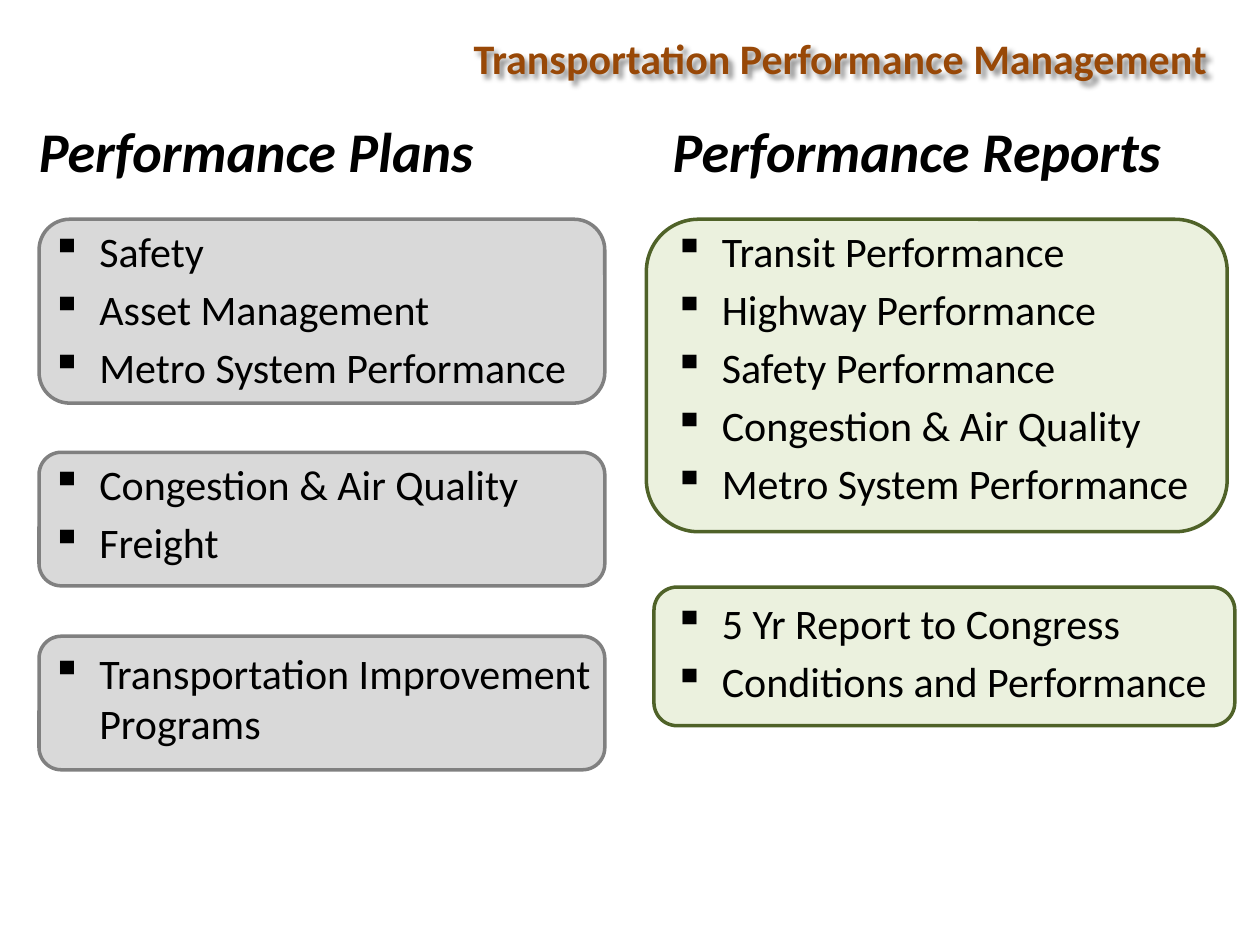
from lxml import etree
from pptx import Presentation
from pptx import util as u
from pptx.dml.color import RGBColor
from pptx.enum import shapes, text
from pptx.oxml import ns

BLACK = RGBColor(0x00, 0x00, 0x00)
BROWN = RGBColor(0x98, 0x48, 0x07)
GREY = RGBColor(0xD9, 0xD9, 0xD9)
GREY_EDGE = RGBColor(0x80, 0x80, 0x80)
GREEN = RGBColor(0xEB, 0xF1, 0xDE)
GREEN_EDGE = RGBColor(0x4F, 0x62, 0x28)

COLUMNS, ROWS = 100, 75
LIST_WIDTH = 44.9
PLANS_LEFT, REPORTS_LEFT = 3.1, 52.5


def write(paragraph, content, size=24, color=BLACK, bold=False, italic=False):
    paragraph.text = content
    font = paragraph.font
    font.name = "Calibri"
    font.size = u.Pt(size)
    font.color.rgb = color
    font.bold = bold
    font.italic = italic


class SlideBuilder:
    def __init__(self, presentation):
        self.slide = presentation.slides.add_slide(presentation.slide_layouts[6])
        self.column = presentation.slide_width / COLUMNS
        self.row = presentation.slide_height / ROWS

    def place(self, left, top, width, height):
        return [
            round(left * self.column),
            round(top * self.row),
            round(width * self.column),
            round(height * self.row),
        ]

    def panel(self, left, top, width, height, fill, edge):
        shape = self.slide.shapes.add_shape(
            shapes.MSO_SHAPE.ROUNDED_RECTANGLE, *self.place(left, top, width, height)
        )
        shape.shadow.inherit = False
        shape.fill.solid()
        shape.fill.fore_color.rgb = fill
        shape.line.color.rgb = edge
        shape.line.width = u.Pt(2)

    def textbox(self, left, top, width, height):
        box = self.slide.shapes.add_textbox(*self.place(left, top, width, height))
        box.text_frame.word_wrap = True
        return box

    def banner(self, left, top, width, height, content):
        box = self.textbox(left, top, width, height)
        box.text_frame.word_wrap = False
        box.text_frame.auto_size = text.MSO_AUTO_SIZE.SHAPE_TO_FIT_TEXT
        write(box.text_frame.paragraphs[0], content, color=BROWN, bold=True)
        effects = etree.SubElement(box._element.spPr, ns.qn("a:effectLst"))
        shadow = etree.SubElement(
            effects, ns.qn("a:outerShdw"), blurRad="38100", dist="38100", dir="2700000"
        )
        color = etree.SubElement(shadow, ns.qn("a:srgbClr"), val="000000")
        etree.SubElement(color, ns.qn("a:alpha"), val="43000")

    def heading(self, left, top, width, height, content):
        frame = self.textbox(left, top, width, height).text_frame
        frame.vertical_anchor = text.MSO_ANCHOR.MIDDLE
        write(frame.paragraphs[0], content, size=32, bold=True, italic=True)

    def bullets(self, left, top, height, items):
        frame = self.textbox(left, top, LIST_WIDTH, height).text_frame
        indent = u.Inches(0.38)
        for index, item in enumerate(items):
            paragraph = frame.add_paragraph() if index else frame.paragraphs[0]
            properties = paragraph._p.get_or_add_pPr()
            properties.set("marL", str(indent))
            properties.set("indent", str(-indent))
            etree.SubElement(properties, ns.qn("a:buChar"), char="▪")
            if index:
                paragraph.space_before = u.Pt(4.4)
            write(paragraph, item)


def main():
    presentation = Presentation()
    presentation.slide_width = u.Inches(10)
    presentation.slide_height = u.Inches(7.5)
    builder = SlideBuilder(presentation)

    builder.banner(36.6, 2.1, 60.8, 5, "Transportation Performance Management")
    builder.heading(2.1, 8.8, 36.9, 6.3, "Performance Plans")
    builder.heading(52.4, 8.8, 42.8, 6.3, "Performance Reports")

    plans = [
        (17.4, 14.6, 17.4, ["Safety", "Asset Management", "Metro System Performance"]),
        (35.9, 10.6, 35.9, ["Congestion & Air Quality", "Freight"]),
        (50.5, 10.6, 50.9, ["Transportation Improvement Programs"]),
    ]
    for top, height, text_top, items in plans:
        builder.panel(PLANS_LEFT, top, LIST_WIDTH, height, GREY, GREY_EDGE)
        builder.bullets(PLANS_LEFT, text_top, height, items)

    reports = [
        (51.3, 17.4, 24.8, 17.4, [
            "Transit Performance",
            "Highway Performance",
            "Safety Performance",
            "Congestion & Air Quality",
            "Metro System Performance",
        ]),
        (51.9, 46.6, 11, 46.9, ["5 Yr Report to Congress", "Conditions and Performance"]),
    ]
    for left, top, height, text_top, items in reports:
        builder.panel(left, top, 46.1, height, GREEN, GREEN_EDGE)
        builder.bullets(REPORTS_LEFT, text_top, height, items)

    presentation.save("out.pptx")


if __name__ == "__main__":
    main()
